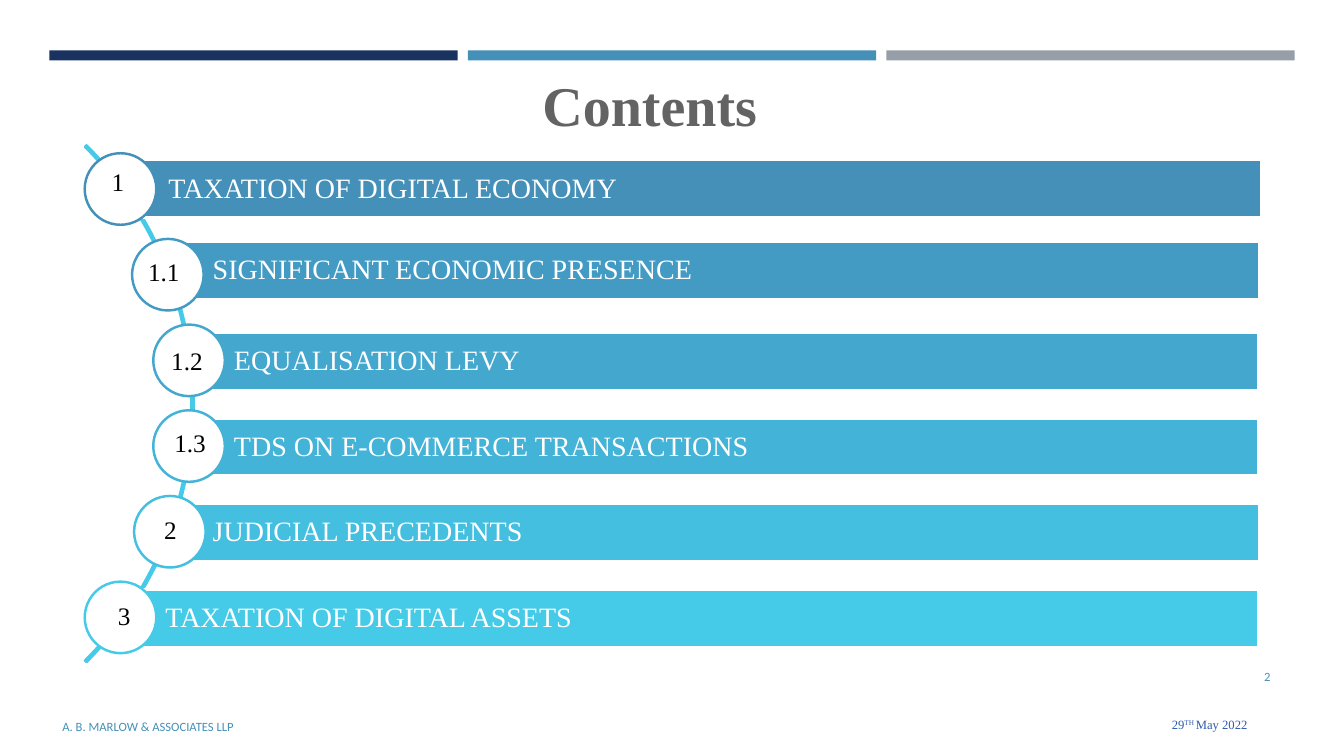
from dataclasses import dataclass

from pptx import Presentation
from pptx.dml.color import RGBColor
from pptx.enum.shapes import MSO_SHAPE
from pptx.enum.text import MSO_ANCHOR, MSO_AUTO_SIZE, PP_ALIGN
from pptx.shapes.autoshape import Shape
from pptx.slide import Slide
from pptx.text.text import _Paragraph
from pptx.util import Inches, Pt

RECT, OVAL, ARC = MSO_SHAPE.RECTANGLE, MSO_SHAPE.OVAL, MSO_SHAPE.BLOCK_ARC
TOP, MIDDLE = MSO_ANCHOR.TOP, MSO_ANCHOR.MIDDLE
LEFT, RIGHT = PP_ALIGN.LEFT, PP_ALIGN.RIGHT

WHITE = RGBColor(0xFF, 0xFF, 0xFF)
BLACK = RGBColor(0x00, 0x00, 0x00)
NAVY = RGBColor(0x1A, 0x32, 0x60)
BLUE = RGBColor(0x45, 0x90, 0xB8)
SILVER = RGBColor(0x96, 0x9F, 0xA7)
GREY = RGBColor(0x63, 0x63, 0x63)
INDIGO = RGBColor(0x2F, 0x5A, 0xAC)
AZURE = RGBColor(0x43, 0x9B, 0xC4)
SKY = RGBColor(0x43, 0xA7, 0xCE)
AQUA = RGBColor(0x43, 0xB3, 0xD7)
TEAL = RGBColor(0x44, 0xBF, 0xE0)
CYAN = RGBColor(0x45, 0xCB, 0xE8)

SERIF, SANS = "Times New Roman", "Calibri"
Box = tuple[float, float, float, float]


@dataclass
class Topic:
    mark: str
    label: str
    color: RGBColor
    bar: Box
    disc: float  # left edge of the circle
    num: Box


TOPICS = [
    Topic("1", "TAXATION OF DIGITAL ECONOMY", BLUE,
          (1.22, 1.59, 11.29, 0.57), 0.84, (1.01, 1.6, 0.33, 0.4)),
    Topic("1.1", "SIGNIFICANT ECONOMIC PRESENCE", AZURE,
          (1.66, 2.4, 10.83, 0.57), 1.31, (1.37, 2.49, 0.52, 0.4)),
    Topic("1.2", "EQUALISATION LEVY", SKY,
          (1.87, 3.3, 10.61, 0.57), 1.52, (1.6, 3.38, 0.52, 0.4)),
    Topic("1.3", "TDS ON E-COMMERCE TRANSACTIONS", AQUA,
          (1.87, 4.15, 10.61, 0.57), 1.52, (1.63, 4.19, 0.52, 0.4)),
    Topic("2", "JUDICIAL PRECEDENTS", TEAL,
          (1.66, 5, 10.83, 0.57), 1.33, (1.53, 5.05, 0.33, 0.4)),
    Topic("3", "TAXATION OF DIGITAL ASSETS", CYAN,
          (1.19, 5.85, 11.29, 0.57), 0.84, (1.07, 5.91, 0.33, 0.4)),
]


def add_form(slide: Slide, kind: MSO_SHAPE, box: Box,
             fill: RGBColor | None, line: RGBColor | None = None) -> Shape:
    form = slide.shapes.add_shape(kind, *map(Inches, box))
    form.shadow.inherit = False
    if fill is None:
        form.fill.background()
    else:
        form.fill.solid()
        form.fill.fore_color.rgb = fill
    if line is None:
        form.line.fill.background()
    else:
        form.line.color.rgb = line
        form.line.width = Pt(1.75)
    return form


def style(para: _Paragraph, size: float, face: str, color: RGBColor,
          align: PP_ALIGN = LEFT) -> None:
    para.alignment = align
    para.font.size = Pt(size)
    para.font.name = face
    para.font.color.rgb = color


def add_text(slide: Slide, box: Box, text: str, size: float, face: str,
             color: RGBColor, align: PP_ALIGN = LEFT,
             anchor: MSO_ANCHOR = MIDDLE, wrap: bool = True) -> _Paragraph:
    frame = slide.shapes.add_textbox(*map(Inches, box)).text_frame
    frame.word_wrap = wrap
    frame.vertical_anchor = anchor
    para = frame.paragraphs[0]
    para.add_run().text = text
    style(para, size, face, color, align)
    return para


def add_title(slide: Slide) -> None:
    title = slide.shapes.title
    title.left, title.top = Inches(5.38), Inches(0.9)
    title.width, title.height = Inches(2.39), Inches(0.55)
    frame = title.text_frame
    frame.text = "Contents"
    frame.margin_left = 0
    frame.auto_size = MSO_AUTO_SIZE.NONE
    frame.vertical_anchor = TOP
    para = frame.paragraphs[0]
    style(para, 40, SERIF, GREY)
    para.font.bold = True
    para.line_spacing = Pt(30)


def add_topic(slide: Slide, topic: Topic, top: float) -> None:
    bar = add_form(slide, RECT, topic.bar, topic.color, WHITE)
    frame = bar.text_frame
    frame.word_wrap = True
    frame.vertical_anchor = MIDDLE
    frame.margin_left = Inches(0.45)
    frame.margin_right = frame.margin_top = frame.margin_bottom = Inches(0.06)
    frame.text = topic.label
    style(frame.paragraphs[0], 20, SERIF, WHITE)
    frame.paragraphs[0].line_spacing = 0.9
    add_form(slide, OVAL, (topic.disc, top, 0.71, 0.71), WHITE, topic.color)
    add_text(slide, topic.num, topic.mark, 18, SERIF, BLACK,
             anchor=TOP, wrap=False)


def add_foot(slide: Slide) -> None:
    add_text(slide, (11.55, 6.51, 1.15, 0.4), "2", 9, SANS, BLUE, RIGHT)
    add_text(slide, (0.52, 7.01, 7.56, 0.4),
             "A. B. MARLOW & ASSOCIATES LLP", 9, SANS, BLUE)
    date = add_text(slide, (4.91, 6.99, 7.56, 0.4), "29", 9, SERIF, INDIGO,
                    RIGHT)
    power = date.add_run()
    power.text = "TH "
    power.font._element.set("baseline", "30000")
    date.add_run().text = "May 2022"


def main() -> None:
    deck = Presentation()
    deck.slide_width, deck.slide_height = Inches(13.33), Inches(7.5)
    slide = deck.slides.add_slide(deck.slide_layouts[5])

    # Top bands and title
    for i, color in enumerate((NAVY, BLUE, SILVER)):
        add_form(slide, RECT, (0.49 + 4.15 * i, 0.5, 4.05, 0.1), color)
    add_title(slide)

    # Curve behind the topics
    curve = add_form(slide, ARC, (-5.33, 0.38, 7.25, 7.25), None, CYAN)
    for i, value in enumerate((189, 27, 0.003)):
        curve.adjustments[i] = value

    # Topics, evenly spaced down the curve
    for i, topic in enumerate(TOPICS):
        add_topic(slide, topic, 1.52 + 0.85 * i)

    # Footer
    add_foot(slide)
    deck.save("out.pptx")


if __name__ == "__main__":
    main()
